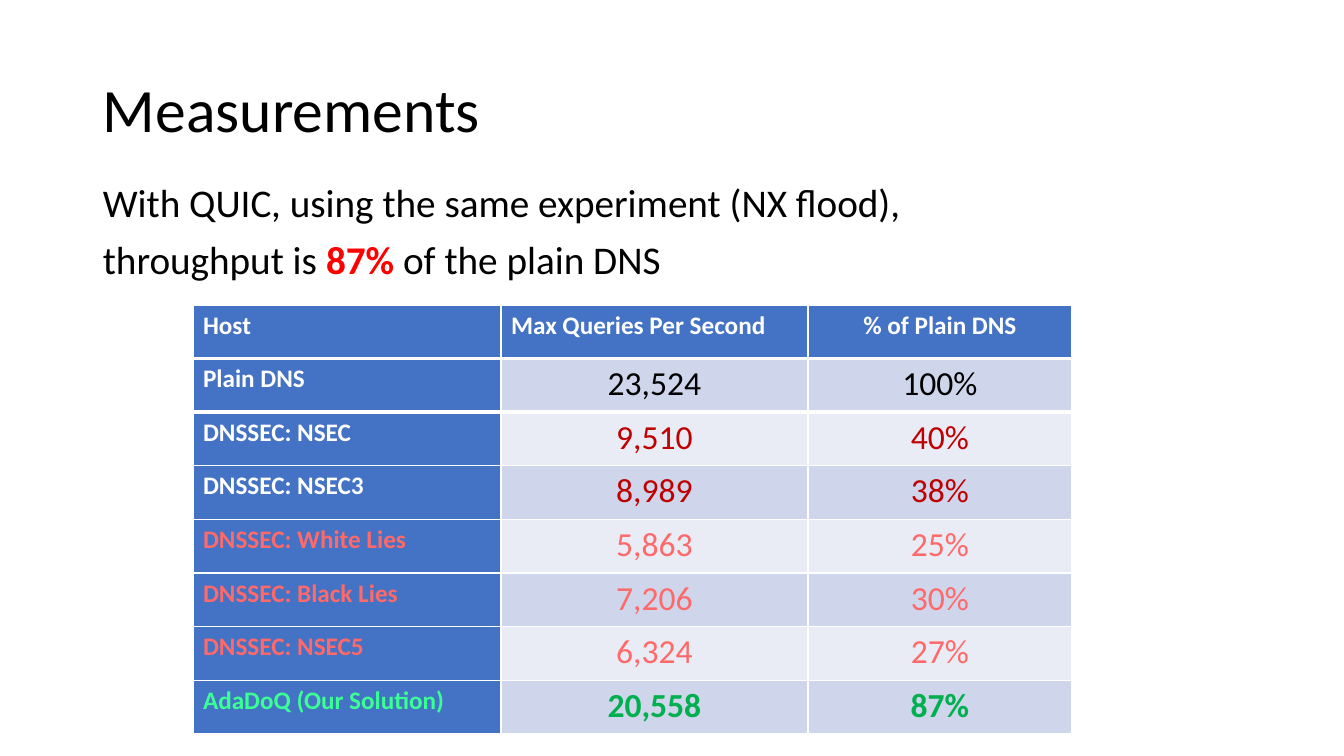
from lxml import etree
from pptx import Presentation
from pptx.dml.color import RGBColor
from pptx.enum.text import MSO_ANCHOR, PP_ALIGN
from pptx.oxml import parse_xml
from pptx.oxml.ns import nsdecls
from pptx.util import Pt

LEFT, CENTER = PP_ALIGN.LEFT, PP_ALIGN.CENTER
TOP, MIDDLE = MSO_ANCHOR.TOP, MSO_ANCHOR.MIDDLE

FONT = "Calibri"
BLACK, WHITE, RED = "000000", "FFFFFF", "FF0000"
DARK_RED, PINK = "C00000", "FF6969"
MINT, GREEN = "3BFF94", "00B050"
BLUE, BANDS = "4472C4", ("CFD5EA", "E9EBF5")

# Paragraphs are lists of runs: text, colour, bold
TITLE = [[("Measurements", BLACK, False)]]
BODY = [
    [("With QUIC, using the same experiment (NX flood),", BLACK, False)],
    [("throughput is ", BLACK, False), ("87% ", RED, True),
     ("of the plain DNS", BLACK, False)],
]
HEADER = ("Host", "Max Queries Per Second", "% of Plain DNS")
HEADER_ALIGN = (LEFT, LEFT, CENTER)
# Label, queries, share, label colour, value colour, bold values
ROWS = [
    ("Plain DNS", "23,524", "100%", WHITE, BLACK, False),
    ("DNSSEC: NSEC", "9,510", "40%", WHITE, DARK_RED, False),
    ("DNSSEC: NSEC3", "8,989", "38%", WHITE, DARK_RED, False),
    ("DNSSEC: White Lies", "5,863", "25%", PINK, PINK, False),
    ("DNSSEC: Black Lies", "7,206", "30%", PINK, PINK, False),
    ("DNSSEC: NSEC5", "6,324", "27%", PINK, PINK, False),
    ("AdaDoQ (Our Solution)", "20,558", "87%", MINT, GREEN, True),
]

# Lengths in px
SLIDE_W, SLIDE_H = 1344, 756
TITLE_BOX = (93, 40, 1159, 146)
BODY_BOX = (93, 179, 1159, 480)
TABLE_LEFT, TABLE_TOP, TABLE_H = 193, 305, 429
COL_WIDTHS = (308, 307, 264)
EMU_PER_PX = 12192000 / SLIDE_W


def px(n):
    return round(n * EMU_PER_PX)


def rgb(color):
    return RGBColor.from_string(color)


def add_run(p, text, size, color, bold):
    r = p.add_run()
    r.text = text
    r.font.name = FONT
    r.font.size = Pt(size)
    r.font.bold = bold
    r.font.color.rgb = rgb(color)


def add_text(slide, box, paragraphs, size, anchor, space_before):
    tf = slide.shapes.add_textbox(*map(px, box)).text_frame
    tf.word_wrap = True
    tf.vertical_anchor = anchor
    for i, runs in enumerate(paragraphs):
        p = tf.add_paragraph() if i else tf.paragraphs[0]
        p.line_spacing = 0.9
        p.space_before = Pt(space_before)
        for text, color, bold in runs:
            add_run(p, text, size, color, bold)


def set_border(cell, side, width):
    """Draw a white border on one side (L, R, T or B) of an unfilled cell."""
    line = parse_xml(f'<a:ln{side} {nsdecls("a")} w="{Pt(width)}"/>')
    fill = etree.SubElement(line, line.tag.replace(f"ln{side}", "solidFill"))
    etree.SubElement(fill, line.tag.replace(f"ln{side}", "srgbClr"), val=WHITE)
    cell._tc.get_or_add_tcPr().append(line)


def fill_cell(cell, text, size, color, bold, align, fill):
    cell.fill.solid()
    cell.fill.fore_color.rgb = rgb(fill)
    p = cell.text_frame.paragraphs[0]
    p.alignment = align
    add_run(p, text, size, color, bold)


def add_results(slide):
    n_rows = len(ROWS) + 1
    table = slide.shapes.add_table(
        n_rows, len(HEADER), px(TABLE_LEFT), px(TABLE_TOP),
        px(sum(COL_WIDTHS)), px(TABLE_H)).table
    table.first_col = True
    for column, width in zip(table.columns, COL_WIDTHS):
        column.width = px(width)
    for row in table.rows:
        row.height = px(TABLE_H / n_rows)

    for c, (text, align) in enumerate(zip(HEADER, HEADER_ALIGN)):
        set_border(table.cell(0, c), "B", 3)
        set_border(table.cell(1, c), "T", 3)
        fill_cell(table.cell(0, c), text, 18, WHITE, True, align, BLUE)
    for i, (label, queries, share, label_color, color, bold) in enumerate(ROWS):
        r = i + 1
        fill_cell(table.cell(r, 0), label, 18, label_color, True, LEFT, BLUE)
        for c, value in enumerate((queries, share), 1):
            fill_cell(table.cell(r, c), value, 24, color, bold, CENTER, BANDS[i % 2])


def main():
    prs = Presentation()
    prs.slide_width, prs.slide_height = px(SLIDE_W), px(SLIDE_H)
    s = prs.slides.add_slide(prs.slide_layouts[6])
    add_text(s, TITLE_BOX, TITLE, 44, MIDDLE, 0)
    add_text(s, BODY_BOX, BODY, 28, TOP, 10)
    add_results(s)
    prs.save("out.pptx")


if __name__ == "__main__":
    main()
